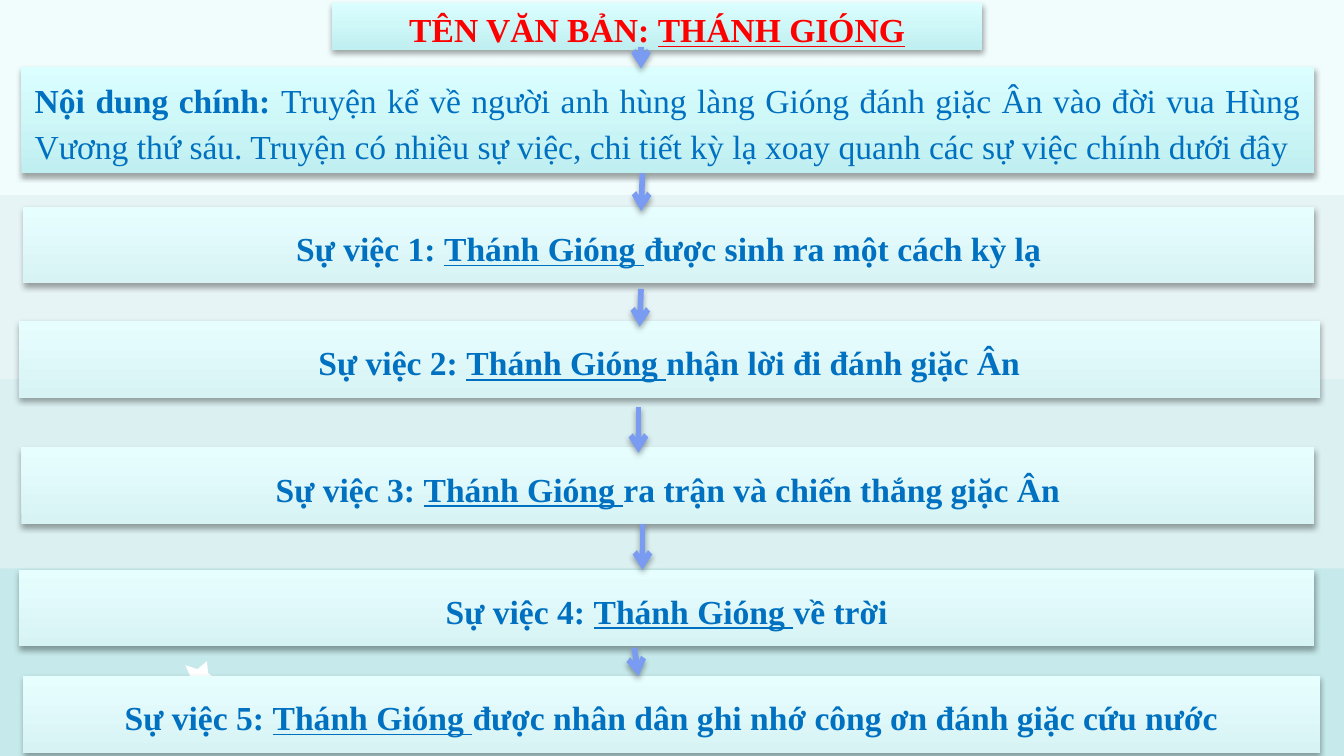
from lxml import etree
from pptx import Presentation
from pptx.dml.color import RGBColor
from pptx.enum.shapes import MSO_CONNECTOR, MSO_SHAPE
from pptx.enum.text import MSO_ANCHOR, PP_ALIGN
from pptx.oxml.ns import qn
from pptx.util import Inches, Pt

RECTANGLE = MSO_SHAPE.RECTANGLE
STRAIGHT = MSO_CONNECTOR.STRAIGHT
MIDDLE = MSO_ANCHOR.MIDDLE
CENTER = PP_ALIGN.CENTER
JUSTIFY = PP_ALIGN.JUSTIFY

BACKGROUND = RGBColor(0xE7, 0xF4, 0xF5)
BAND_TOP = RGBColor(0xF1, 0xFC, 0xFC)
BAND_MIDDLE = RGBColor(0xDB, 0xF0, 0xF1)
BAND_BOTTOM = RGBColor(0xC6, 0xEA, 0xEB)
WHITE = RGBColor(0xFF, 0xFF, 0xFF)
RED = RGBColor(0xFF, 0x00, 0x00)
BLUE = RGBColor(0x00, 0x70, 0xC0)
ARROW_BLUE = RGBColor(0x79, 0x9C, 0xF2)
STRONG = (RGBColor(0xC0, 0xEF, 0xF1), RGBColor(0xDB, 0xFE, 0xFF))
SOFT = (RGBColor(0xD8, 0xF3, 0xF4), RGBColor(0xE7, 0xFE, 0xFF))

SLIDE_WIDTH = 10
SLIDE_HEIGHT = SLIDE_WIDTH * 9 / 16
EVENT_HEIGHT = 0.57
HERO = "Thánh Gióng "
EVENTS = [
    (0.17, 1.54, 9.61, "được sinh ra một cách kỳ lạ"),
    (0.14, 2.39, 9.68, "nhận lời đi đánh giặc Ân"),
    (0.16, 3.33, 9.62, "ra trận và chiến thắng giặc Ân"),
    (0.14, 4.24, 9.64, "về trời"),
    (0.17, 5.03, 9.65, "được nhân dân ghi nhớ công ơn đánh giặc cứu nước"),
]
ARROWS = [
    (4.77, 0.35, 4.77, 0.51),
    (4.78, 1.29, 4.77, 1.57),
    (4.77, 2.15, 4.76, 2.43),
    (4.75, 3.03, 4.75, 3.37),
    (4.78, 3.9, 4.78, 4.24),
    (4.72, 4.82, 4.75, 5.03),
]
STAR = [
    (1.54, 4.92), (1.55, 5.01), (1.62, 5.06), (1.54, 5.09), (1.51, 5.18),
    (1.46, 5.11), (1.36, 5.11), (1.42, 5.04), (1.38, 4.95), (1.47, 4.98),
]


class StoryMap:
    """Draws the parts of a story outline on one slide in a shared style."""

    font_name = "Times New Roman"
    font_size = Pt(18)

    def __init__(self, slide):
        self.slide = slide
        self.shapes = slide.shapes

    def background(self, color):
        fill = self.slide.background.fill
        fill.solid()
        fill.fore_color.rgb = color

    def plain(self, shape, color):
        shape.shadow.inherit = False
        shape.fill.solid()
        shape.fill.fore_color.rgb = color
        shape.line.fill.background()

    def rectangle(self, left, top, width, height):
        return self.shapes.add_shape(
            RECTANGLE, Inches(left), Inches(top), Inches(width), Inches(height))

    def band(self, top, bottom, color):
        self.plain(self.rectangle(0, top, SLIDE_WIDTH, bottom - top), color)

    def star(self, points):
        corners = [(Inches(x), Inches(y)) for x, y in points]
        builder = self.shapes.build_freeform(*corners[0], scale=1.0)
        builder.add_line_segments(corners[1:], close=True)
        self.plain(builder.convert_to_shape(), WHITE)

    def shadow(self, shape):
        effects = etree.SubElement(shape._element.spPr, qn("a:effectLst"))
        outer = etree.SubElement(
            effects, qn("a:outerShdw"), blurRad=str(Pt(3.1)), dist=str(Pt(1.8)),
            dir="5400000", rotWithShape="0")
        black = etree.SubElement(outer, qn("a:srgbClr"), val="000000")
        etree.SubElement(black, qn("a:alpha"), val="35000")

    def box(self, left, top, width, height, colors, runs,
            color=BLUE, alignment=CENTER, space_after=0):
        shape = self.rectangle(left, top, width, height)
        shape.fill.gradient()
        shape.fill.gradient_angle = 90
        for stop, stop_color in zip(shape.fill.gradient_stops, colors):
            stop.color.rgb = stop_color
        shape.line.fill.background()
        self.shadow(shape)
        frame = shape.text_frame
        frame.word_wrap = True
        frame.vertical_anchor = MIDDLE
        paragraph = frame.paragraphs[0]
        paragraph.alignment = alignment
        paragraph.line_spacing = 1.15
        paragraph.space_after = Pt(space_after)
        paragraph.font.name = self.font_name
        paragraph.font.size = self.font_size
        paragraph.font.color.rgb = color
        for text, bold, underline in runs:
            run = paragraph.add_run()
            run.text = text
            run.font.bold = bold
            run.font.underline = underline

    def arrow(self, *ends):
        connector = self.shapes.add_connector(STRAIGHT, *map(Inches, ends))
        connector.line.color.rgb = ARROW_BLUE
        connector.line.width = Pt(3)
        line = connector._element.spPr.find(qn("a:ln"))
        etree.SubElement(line, qn("a:tailEnd"), type="arrow")
        self.shadow(connector)


def main():
    presentation = Presentation()
    presentation.slide_width = Inches(SLIDE_WIDTH)
    presentation.slide_height = Inches(SLIDE_HEIGHT)
    story = StoryMap(presentation.slides.add_slide(presentation.slide_layouts[6]))

    story.background(BACKGROUND)
    story.band(0, 1.45, BAND_TOP)
    story.band(2.82, 4.23, BAND_MIDDLE)
    story.band(4.23, SLIDE_HEIGHT, BAND_BOTTOM)
    story.star(STAR)

    story.box(2.47, 0.02, 4.84, 0.35, STRONG,
              [("TÊN VĂN BẢN: ", True, False), ("THÁNH GIÓNG", True, True)],
              color=RED, space_after=10)
    story.box(0.16, 0.5, 9.62, 0.79, STRONG,
              [("Nội dung chính: ", True, False),
               ("Truyện kể về người anh hùng làng Gióng đánh giặc Ân vào đời vua "
                "Hùng Vương thứ sáu. Truyện có nhiều sự việc, chi tiết kỳ lạ xoay "
                "quanh các sự việc chính dưới đây", False, False)],
              alignment=JUSTIFY, space_after=10)
    for number, (left, top, width, event) in enumerate(EVENTS, 1):
        story.box(left, top, width, EVENT_HEIGHT, SOFT,
                  [(f"Sự việc {number}: ", True, False),
                   (HERO, True, True), (event, True, False)])
    for ends in ARROWS:
        story.arrow(*ends)

    presentation.save("out.pptx")


if __name__ == "__main__":
    main()
